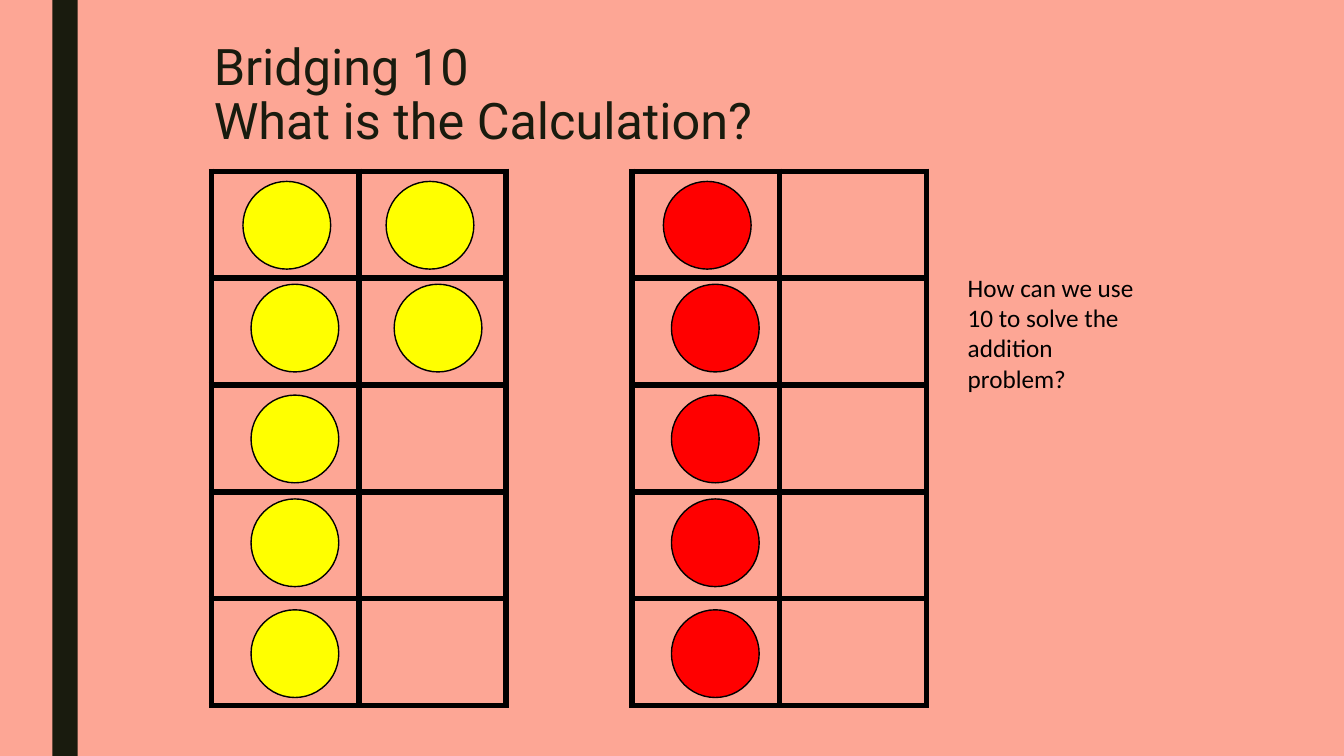
import pptx
import pptx.util
import pptx.dml.color
import pptx.enum.shapes
import pptx.enum.text
from lxml import etree
from pptx.oxml.ns import qn

Inches = pptx.util.Inches
Pt = pptx.util.Pt

COLORS = {"back": "FDA695", "bar": "191B0E", "ink": "000000",
          "yellow": "FFFF00", "red": "FF0000"}

TOP, CELL_W, CELL_H = 1.7, 1.46, 1.06
ROWS, COLS = 5, 2
SIZE = 0.87
STEP = 1.42                               # between counters in a row
TOPS = [1.8, 2.82, 3.92, 4.95, 6.05]      # counter tops, row by row
INSETS = [0.31, 0.39, 0.39, 0.39, 0.39]   # first counter from frame edge

TITLE = {"name": "Roboto", "size": Pt(36), "color": "bar"}
BODY = {"name": "Calibri", "size": Pt(18), "color": "ink"}


def rgb(name):
    return pptx.dml.color.RGBColor.from_string(COLORS[name])


def paint(fill, name):
    fill.solid()
    fill.fore_color.rgb = rgb(name)


def place(shape, box):
    for key, value in zip(("left", "top", "width", "height"), box):
        setattr(shape, key, Inches(value))


def write(frame, text, style, **form):
    """Fill a text frame with one styled paragraph."""
    for key, value in form.items():
        setattr(frame, key, value)
    para = frame.paragraphs[0]
    para.text = text
    for run in para.runs:
        for key, value in style.items():
            if key == "color":
                run.font.color.rgb = rgb(value)
            else:
                setattr(run.font, key, value)
    return para


def add_form(slide, kind, box, color, line=None):
    """Add a plain filled shape, outlined if a line colour is given."""
    shape = slide.shapes.add_shape(kind, *map(Inches, box))
    shape.shadow.inherit = False
    paint(shape.fill, color)
    if line:
        shape.line.color.rgb = rgb(line)
        shape.line.width = Pt(1)
    else:
        shape.line.fill.background()


def edge(cell):
    """Draw a thick border on all four sides of a cell."""
    props = cell._tc.get_or_add_tcPr()
    for side in ("lnL", "lnR", "lnT", "lnB"):
        line = etree.SubElement(props, qn("a:" + side), w=str(Pt(4.5)))
        fill = etree.SubElement(line, qn("a:solidFill"))
        etree.SubElement(fill, qn("a:srgbClr"), val=COLORS["ink"])


def add_frame(slide, left):
    """Add an empty ten frame."""
    box = (left, TOP, CELL_W * COLS, CELL_H * ROWS)
    table = slide.shapes.add_table(ROWS, COLS, *map(Inches, box)).table
    table.first_row = table.horz_banding = False
    for col in table.columns:
        col.width = Inches(CELL_W)
    for row in table.rows:
        row.height = Inches(CELL_H)
        for cell in row.cells:
            edge(cell)
            cell.fill.background()


def add_dots(slide, left, counts, color):
    """Add round counters, with the given count in each row."""
    oval = pptx.enum.shapes.MSO_SHAPE.OVAL
    for top, inset, count in zip(TOPS, INSETS, counts):
        for col in range(count):
            box = (left + inset + col * STEP, top, SIZE, SIZE)
            add_form(slide, oval, box, color, "ink")


def main():
    deck = pptx.Presentation()
    deck.slide_width, deck.slide_height = Inches(13.33), Inches(7.5)
    slide = deck.slides.add_slide(deck.slide_layouts[5])
    paint(slide.background.fill, "back")

    # Side bar
    rect = pptx.enum.shapes.MSO_SHAPE.RECTANGLE
    add_form(slide, rect, (0.52, 0, 0.25, 7.5), "bar")

    # Title
    title = slide.shapes.title
    place(title, (2.02, 0.33, 9.15, 1.25))
    para = write(title.text_frame, "Bridging 10\nWhat is the Calculation?", TITLE,
                 word_wrap=True, auto_size=pptx.enum.text.MSO_AUTO_SIZE.NONE,
                 vertical_anchor=pptx.enum.text.MSO_ANCHOR.MIDDLE)
    para.alignment = pptx.enum.text.PP_ALIGN.LEFT
    para.line_spacing = 0.89

    # Ten frames with their counters
    for left, counts, color in ((2.1, (2, 2, 1, 1, 1), "yellow"),
                                (6.27, (1, 1, 1, 1, 1), "red")):
        add_frame(slide, left)
        add_dots(slide, left, counts, color)

    # Question
    note = slide.shapes.add_textbox(*map(Inches, (9.5, 2.65, 1.97, 1.31)))
    write(note.text_frame, "How can we use 10 to solve the addition problem?",
          BODY, word_wrap=True,
          auto_size=pptx.enum.text.MSO_AUTO_SIZE.SHAPE_TO_FIT_TEXT)

    deck.save("out.pptx")


if __name__ == "__main__":
    main()
